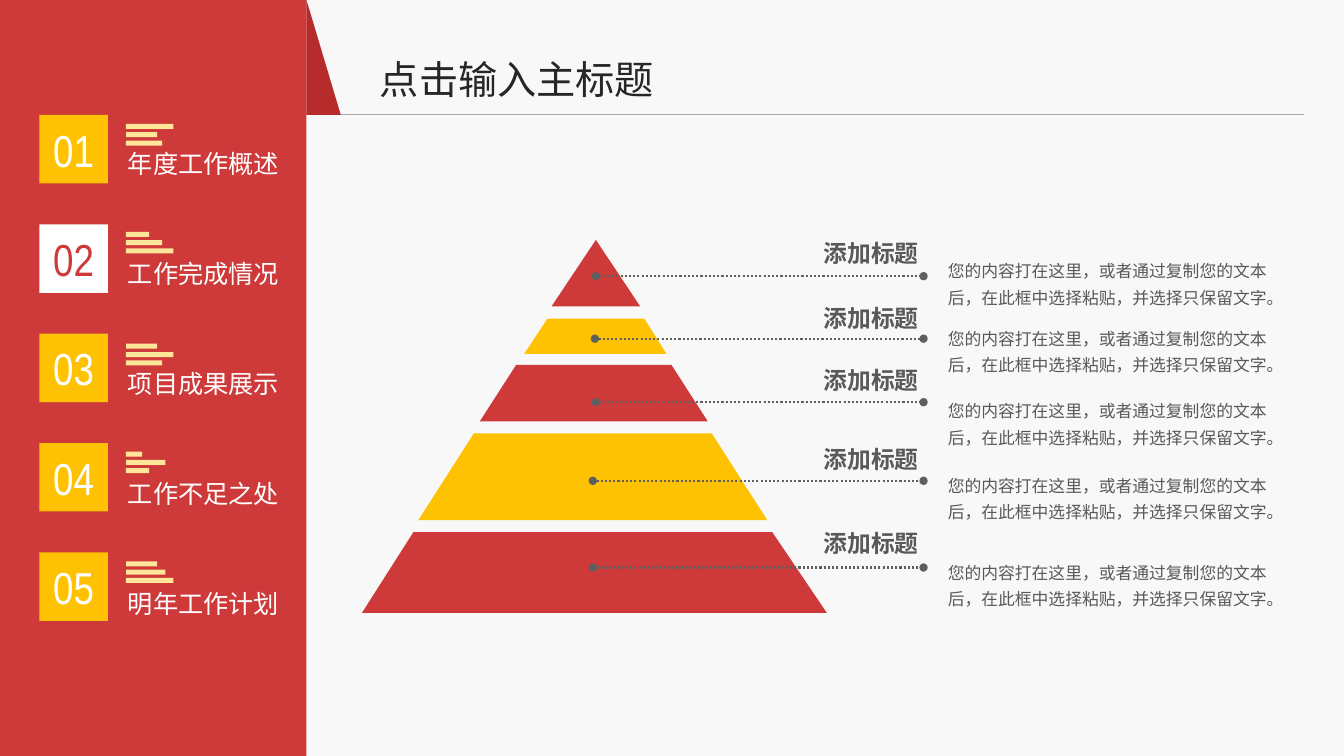
import pptx
import pptx.dml.color
import pptx.enum.dml
import pptx.enum.shapes
import pptx.enum.text
import pptx.oxml
import pptx.oxml.ns
import pptx.util

Inches = pptx.util.Inches
Pt = pptx.util.Pt
RGBColor = pptx.dml.color.RGBColor
MSO_SHAPE = pptx.enum.shapes.MSO_SHAPE
PP_ALIGN = pptx.enum.text.PP_ALIGN
MSO_ANCHOR = pptx.enum.text.MSO_ANCHOR

RED = RGBColor(0xCE, 0x3A, 0x3A)
DARK_RED = RGBColor(0xB6, 0x2C, 0x2C)
YELLOW = RGBColor(0xFE, 0xC2, 0x02)
PALE_YELLOW = RGBColor(0xFF, 0xE6, 0x99)
WHITE = RGBColor(0xFF, 0xFF, 0xFF)
PAPER = RGBColor(0xF8, 0xF8, 0xF8)
RULE_GREY = RGBColor(0xA6, 0xA6, 0xA6)
LEADER_GREY = RGBColor(0x5F, 0x5F, 0x5F)
TEXT_GREY = RGBColor(0x59, 0x59, 0x59)
INK = RGBColor(0x26, 0x26, 0x26)

CJK_FONT = "Noto Sans CJK SC"
NUMBER_FONT = "Arial Narrow"

CURRENT_SECTION = 2
SECTIONS = [
    ("年度工作概述", 0.09, (0.47, 0.31, 0.36)),
    ("工作完成情况", 1.16, (0.23, 0.36, 0.47)),
    ("项目成果展示", 2.27, (0.31, 0.47, 0.36)),
    ("工作不足之处", 3.34, (0.16, 0.39, 0.23)),
    ("明年工作计划", 4.43, (0.31, 0.39, 0.47)),
]

# top, bottom, top edge (left, right), bottom edge (left, right)
TIERS = [
    (0, 0.66, (2.32, 2.32), (1.88, 2.76)),
    (0.78, 1.13, (1.84, 2.8), (1.61, 3.02)),
    (1.24, 1.8, (1.53, 3.07), (1.17, 3.43)),
    (1.92, 2.78, (1.11, 3.47), (0.56, 4.02)),
    (2.9, 3.7, (0.51, 4.07), (0, 4.61)),
]

# leader start, leader height, heading top, body top
CALLOUTS = [
    (2.32, 0.41, 0, 0.16),
    (2.31, 1.03, 0.64, 0.83),
    (2.32, 1.66, 1.26, 1.55),
    (2.29, 2.44, 2.04, 2.29),
    (2.29, 3.3, 2.88, 3.15),
]
HEADING = "添加标题"
BODY = "您的内容打在这里，或者通过复制您的文本后，在此框中选择粘贴，并选择只保留文字。"


def paint(sp, color):
    sp.shadow.inherit = False
    sp.fill.solid()
    sp.fill.fore_color.rgb = color
    sp.line.fill.background()


def add_block(s, left, top, width, height, color, kind=MSO_SHAPE.RECTANGLE):
    sp = s.shapes.add_shape(kind, Inches(left), Inches(top), Inches(width), Inches(height))
    paint(sp, color)
    return sp


def add_run(p, text, size, color, font=CJK_FONT, bold=False):
    r = p.add_run()
    r.text = text
    r.font.name = font
    r.font.size = Pt(size)
    r.font.bold = bold
    r.font.color.rgb = color
    ea = pptx.oxml.ns.qn("a:ea")
    r.font._element.get_or_add_latin().addnext(r.font._element.makeelement(ea, {"typeface": font}))


def add_text(s, left, top, width, height, text, size, color,
             bold=False, wrap=False, align=PP_ALIGN.LEFT, spacing=None, insets=(0.1, 0.05)):
    sp = s.shapes.add_textbox(Inches(left), Inches(top), Inches(width), Inches(height))
    tf = sp.text_frame
    tf.word_wrap = wrap
    tf.auto_size = pptx.enum.text.MSO_AUTO_SIZE.SHAPE_TO_FIT_TEXT
    tf.margin_left = tf.margin_right = Inches(insets[0])
    tf.margin_top = tf.margin_bottom = Inches(insets[1])
    p = tf.paragraphs[0]
    p.alignment = align
    p.line_spacing = spacing
    add_run(p, text, size, color, bold=bold)


def add_rule(s, x1, x2, y, color, width):
    line = s.shapes.add_connector(pptx.enum.shapes.MSO_CONNECTOR.STRAIGHT,
                                  Inches(x1), Inches(y), Inches(x2), Inches(y))
    line.line.color.rgb = color
    line.line.width = Pt(width)
    pptx.oxml.ns.qn("a:effectLst")
    sp_pr = line._element.spPr
    sp_pr.append(sp_pr.makeelement(pptx.oxml.ns.qn("a:effectLst"), {}))
    return line


def add_leader(s, x1, x2, y):
    line = add_rule(s, x1, x2, y, LEADER_GREY, 1.5)
    line.line.dash_style = pptx.enum.dml.MSO_LINE.ROUND_DOT
    ln = line.line._get_or_add_ln()
    for end in ("a:headEnd", "a:tailEnd"):
        ln.append(ln.makeelement(pptx.oxml.ns.qn(end), {"type": "oval"}))


def add_header(s, left, top, width, height):
    add_rule(s, left, left + width, top + height, RULE_GREY, 0.75)
    add_block(s, left, top, 0.34, height, DARK_RED, MSO_SHAPE.RIGHT_TRIANGLE)
    add_text(s, left + 0.63, top + 0.5, 2.95, 0.57, "点击输入主标题", 28, INK)


def add_sidebar(s, left, top, width, height):
    add_block(s, left, top, width, height, RED)
    first = top + 1.14
    for i, (label, bars_top, bar_widths) in enumerate(SECTIONS):
        current = i + 1 == CURRENT_SECTION
        sp = add_block(s, left + 0.39, first + i * 1.085, 0.68, 0.68,
                       WHITE if current else YELLOW)
        tf = sp.text_frame
        tf.vertical_anchor = MSO_ANCHOR.MIDDLE
        p = tf.paragraphs[0]
        p.alignment = PP_ALIGN.CENTER
        add_run(p, f"{i + 1:02d}", 32, RED if current else WHITE, NUMBER_FONT)
        for j, bar_width in enumerate(bar_widths):
            add_block(s, left + 1.25, first + bars_top + j * 0.082, bar_width, 0.05, PALE_YELLOW)
        add_text(s, left + 1.17, first + 0.28 + i * 1.0925, 1.72, 0.4, label, 18, WHITE)


def add_pyramid(s, left, top):
    for i, (y1, y2, upper, lower) in enumerate(TIERS):
        color = YELLOW if i % 2 else RED
        if upper[0] == upper[1]:
            add_block(s, left + lower[0], top + y1, lower[1] - lower[0], y2 - y1,
                      color, MSO_SHAPE.ISOSCELES_TRIANGLE)
            continue
        corners = [(upper[0], y1), (upper[1], y1), (lower[1], y2), (lower[0], y2)]
        points = [(Inches(left + x), Inches(top + y)) for x, y in corners]
        fb = s.shapes.build_freeform(*points[0])
        fb.add_line_segments(points[1:], close=True)
        paint(fb.convert_to_shape(), color)


def add_callouts(s, left, top):
    insets = (0.08, 0.04)
    for start, leader_y, heading_y, body_y in CALLOUTS:
        add_leader(s, left + start, left + 5.57, top + leader_y)
        add_text(s, left + 4.49, top + heading_y, 1.12, 0.37, HEADING, 17, TEXT_GREY,
                 bold=True, align=PP_ALIGN.CENTER, insets=insets)
        add_text(s, left + 5.73, top + body_y, 3.49, 0.58, BODY, 12, TEXT_GREY,
                 wrap=True, spacing=1.3, insets=insets)


def main():
    prs = pptx.Presentation()
    prs.slide_width, prs.slide_height = Inches(13.33), Inches(7.5)
    s = prs.slides.add_slide(prs.slide_layouts[6])
    add_block(s, 1.72, 0, 11.61, 7.5, PAPER)
    add_sidebar(s, 0, 0, 3.04, 7.5)
    add_header(s, 3.04, 0, 9.89, 1.14)
    add_pyramid(s, 3.59, 2.38)
    add_callouts(s, 3.59, 2.33)
    prs.save("out.pptx")


if __name__ == "__main__":
    main()
